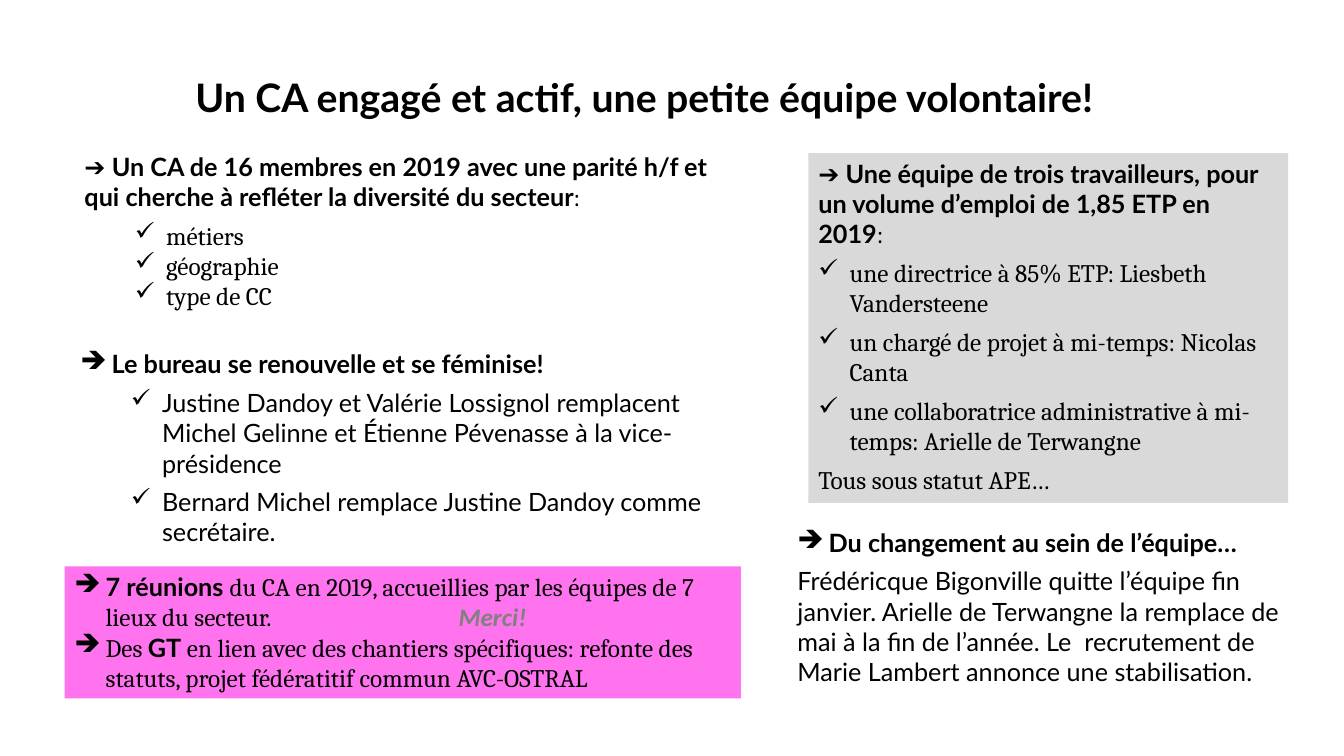
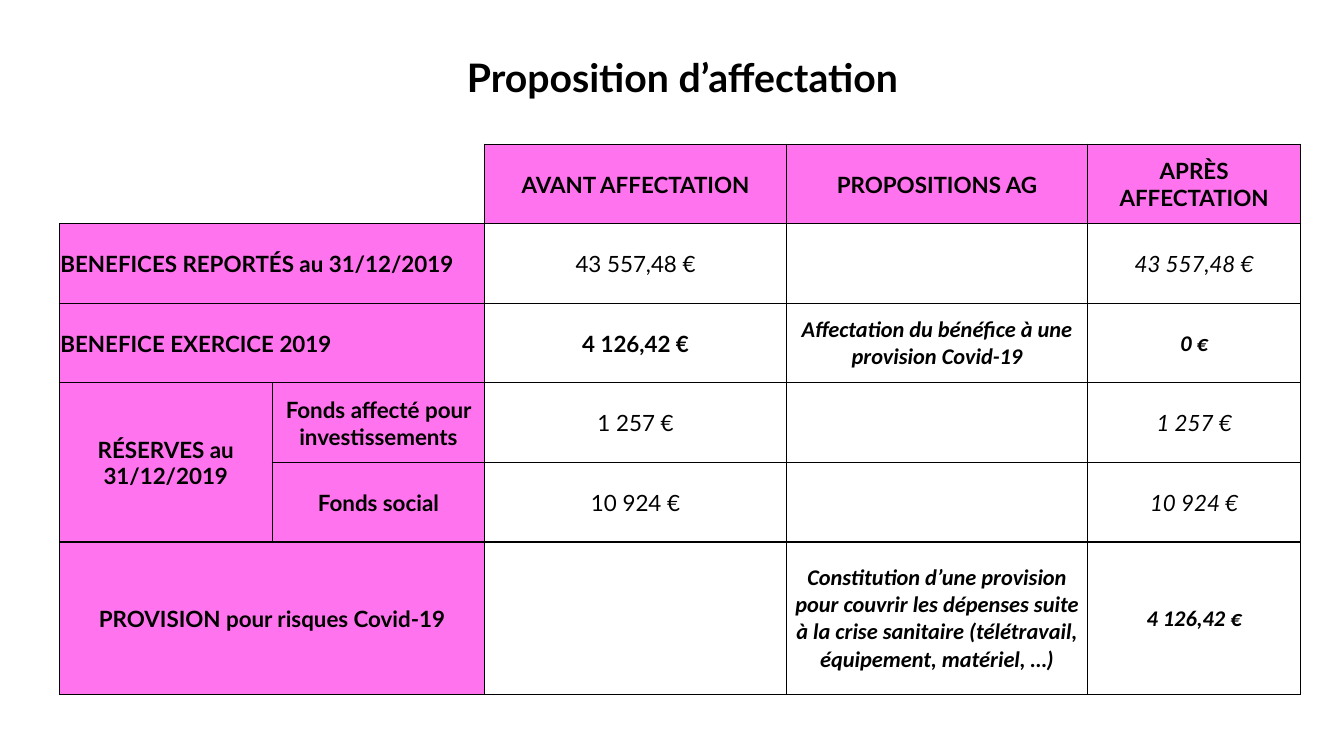
from dataclasses import dataclass
from itertools import product
from typing import Any, NamedTuple, Optional

from lxml.etree import SubElement
from pptx import Presentation
from pptx.dml.color import RGBColor
from pptx.enum.shapes import MSO_SHAPE
from pptx.enum.text import MSO_ANCHOR, MSO_AUTO_SIZE, PP_ALIGN
from pptx.oxml.ns import qn
from pptx.util import Inches, Pt

BLACK = RGBColor(0x00, 0x00, 0x00)
GREY = RGBColor(0x80, 0x80, 0x80)
LIGHT_GREY = RGBColor(0xD9, 0xD9, 0xD9)
PINK = RGBColor(0xFF, 0x74, 0xEE)
WHITE = RGBColor(0xFF, 0xFF, 0xFF)

SLIDE_WIDTH, SLIDE_HEIGHT = Inches(13.33), Inches(7.5)
COLUMN, ROW = SLIDE_WIDTH / 100, SLIDE_HEIGHT / 100
TITLE_ONLY = 5
HANGING = Inches(0.31)
LEVEL_STEP = Inches(0.5)
THANKS_TAB = Inches(3.81)
ARROW, CHECK = "➔", "✓"

LATO: dict[str, Any] = {"name": "Lato", "bold": False}
LATO_BOLD = {"name": "Lato", "bold": True}
LATO_ITALIC = {"name": "Lato", "italic": True}
CAMBRIA = {"name": "Cambria", "bold": False}
CALIBRI_STRONG = {"name": "Calibri", "bold": True, "italic": True}
THANKS = CALIBRI_STRONG | {"color": GREY}


class Box(NamedTuple):
    """Left, top, width and height in hundredths of the slide."""
    left: float
    top: float
    width: float
    height: float

    def lengths(self) -> tuple[int, ...]:
        units = (COLUMN, ROW, COLUMN, ROW)
        return tuple(round(value * unit) for value, unit in zip(self, units))


class Run(NamedTuple):
    text: str
    style: dict[str, Any]


@dataclass(frozen=True)
class Line:
    runs: tuple[Run, ...]
    bullet: str = ""
    level: int = 0
    after: int = 6
    tab: int = 0


@dataclass(frozen=True)
class Panel:
    box: Box
    lines: tuple[Line, ...]
    fill: Optional[RGBColor] = None


@dataclass(frozen=True)
class Entry:
    text: str = ""
    style: Optional[dict[str, Any]] = None
    fill: RGBColor = WHITE
    align: PP_ALIGN = PP_ALIGN.CENTER
    rows: int = 1
    columns: int = 1


def checks(style: dict[str, Any], level: int, after: int, *texts: str) -> tuple[Line, ...]:
    return tuple(Line((Run(text, style),), CHECK, level, after) for text in texts)


def label(text: str, **options: Any) -> Entry:
    return Entry(text, LATO_BOLD, PINK, **options)


PANELS = (
    Panel(Box(5.55, 19.33, 49.73, 22.67), (
        Line((Run("➔ Un CA de 16 membres en 2019 avec une parité h/f et qui cherche "
                  "à refléter la diversité du secteur", LATO_BOLD), Run(":", CAMBRIA))),
        *checks(CAMBRIA, 1, 0, "métiers", "géographie", "type de CC"),
    )),
    Panel(Box(60.15, 20.27, 35.7, 46.27), (
        Line((Run("➔ Une équipe de trois travailleurs, pour un volume d’emploi "
                  "de 1,85 ETP en 2019", LATO_BOLD), Run(":", CAMBRIA))),
        *checks(CAMBRIA, 0, 6,
                "une directrice à 85% ETP: Liesbeth Vandersteene",
                "un chargé de projet à mi-temps: Nicolas Canta",
                "une collaboratrice administrative à mi-temps: Arielle de Terwangne"),
        Line((Run("Tous sous statut APE…", CAMBRIA),)),
    ), LIGHT_GREY),
    Panel(Box(5.25, 45.47, 49.73, 27.87), (
        Line((Run("Le bureau se renouvelle et se féminise!", LATO_BOLD),), ARROW),
        *checks(LATO, 1, 6,
                "Justine Dandoy et Valérie Lossignol remplacent Michel Gelinne "
                "et Étienne Pévenasse à la vice-présidence",
                "Bernard Michel remplace Justine Dandoy comme secrétaire."),
    )),
    Panel(Box(4.8, 74.93, 50.33, 17.47), (
        Line((Run("7 réunions ", LATO_BOLD),
              Run("du CA en 2019, accueillies par les équipes de 7 lieux du secteur.\t",
                  CAMBRIA),
              Run("Merci!", THANKS)), ARROW, after=0, tab=THANKS_TAB),
        Line((Run("Des ", CAMBRIA), Run("GT", LATO_BOLD),
              Run(" en lien avec des chantiers spécifiques: refonte des statuts, "
                  "projet fédératitif commun AVC-OSTRAL", CAMBRIA)), ARROW, after=0),
    ), PINK),
    Panel(Box(58.6, 69.07, 39.2, 22.67), (
        Line((Run("Du changement au sein de l’équipe…", LATO_BOLD),), ARROW),
        Line((Run("Frédéricque Bigonville quitte l’équipe fin janvier. Arielle de "
                  "Terwangne la remplace de mai à la fin de l’année. Le  recrutement "
                  "de Marie Lambert annonce une stabilisation.", LATO),)),
    )),
)

TABLE_LEFT, TABLE_TOP = 4.42, 19.07
TABLE_COLUMNS = (15.83, 15.83, 22.43, 22.43, 15.83)
TABLE_ROWS = (10.53,) * 5 + (20.13,)
EMPTY = Entry()
ENTRIES: tuple[tuple[Optional[Entry], ...], ...] = (
    (EMPTY, EMPTY, label("AVANT AFFECTATION"), label("PROPOSITIONS AG"),
     label("APRÈS AFFECTATION")),
    (label("BENEFICES REPORTÉS au 31/12/2019", align=PP_ALIGN.LEFT, columns=2), None,
     Entry("43 557,48 €", LATO), EMPTY, Entry("43 557,48 €", LATO_ITALIC)),
    (label("BENEFICE EXERCICE 2019", align=PP_ALIGN.LEFT, columns=2), None,
     Entry("4 126,42 €", LATO_BOLD),
     Entry("Affectation du bénéfice à une provision Covid-19", CALIBRI_STRONG),
     Entry("0 €", CALIBRI_STRONG)),
    (label("RÉSERVES au 31/12/2019", rows=2), label("Fonds affecté pour investissements"),
     Entry("1 257 €", LATO), EMPTY, Entry("1 257 €", LATO_ITALIC)),
    (None, label("Fonds social"),
     Entry("10 924 €", LATO), EMPTY, Entry("10 924 €", LATO_ITALIC)),
    (label("PROVISION pour risques Covid-19", columns=2), None, EMPTY,
     Entry("Constitution d’une provision pour couvrir les dépenses suite à la crise "
           "sanitaire (télétravail, équipement, matériel, …)", CALIBRI_STRONG),
     Entry("4 126,42 €", CALIBRI_STRONG)),
)


def set_all(target: Any, values: dict[str, Any]) -> None:
    for name, value in values.items():
        setattr(target, name, value)


def add_run(paragraph: Any, run: Run, size: int) -> None:
    text_run = paragraph.add_run()
    text_run.text = run.text
    style = {"size": Pt(size)} | run.style
    text_run.font.color.rgb = style.pop("color", BLACK)
    set_all(text_run.font, style)


def add_titled_slide(presentation: Any, text: str, left: float, top: float) -> Any:
    slide = presentation.slides.add_slide(presentation.slide_layouts[TITLE_ONLY])
    title = slide.shapes.title
    box = Box(left, top, 86.25, 16.27).lengths()
    set_all(title, dict(zip(("left", "top", "width", "height"), box)))
    title.text_frame.vertical_anchor = MSO_ANCHOR.MIDDLE
    paragraph = title.text_frame.paragraphs[0]
    set_all(paragraph, {"alignment": PP_ALIGN.CENTER, "line_spacing": 0.9})
    add_run(paragraph, Run(text, LATO_BOLD), 28)
    return slide


def format_line(paragraph: Any, line: Line) -> None:
    set_all(paragraph, {"alignment": PP_ALIGN.LEFT, "level": line.level,
                        "space_after": Pt(line.after)})
    properties = paragraph._p.get_or_add_pPr()
    if line.bullet:
        properties.set("marL", str(HANGING + line.level * LEVEL_STEP))
        properties.set("indent", str(-HANGING))
        SubElement(properties, qn("a:buChar"), char=line.bullet)
    if line.tab:
        tabs = SubElement(properties, qn("a:tabLst"))
        SubElement(tabs, qn("a:tab"), pos=str(line.tab), algn="l")


def add_panel(slide: Any, panel: Panel) -> None:
    if panel.fill is None:
        shape = slide.shapes.add_textbox(*panel.box.lengths())
    else:
        shape = slide.shapes.add_shape(MSO_SHAPE.RECTANGLE, *panel.box.lengths())
        shape.shadow.inherit = False
        shape.fill.solid()
        shape.fill.fore_color.rgb = panel.fill
        shape.line.fill.background()
    frame = shape.text_frame
    set_all(frame, {"word_wrap": True, "vertical_anchor": MSO_ANCHOR.TOP,
                    "auto_size": MSO_AUTO_SIZE.SHAPE_TO_FIT_TEXT})
    for index, line in enumerate(panel.lines):
        paragraph = frame.add_paragraph() if index else frame.paragraphs[0]
        format_line(paragraph, line)
        for run in line.runs:
            add_run(paragraph, run, 18)


def add_borders(cell: Any) -> None:
    properties = cell._tc.get_or_add_tcPr()
    for side in ("lnL", "lnR", "lnT", "lnB"):
        border = SubElement(properties, qn(f"a:{side}"), w=str(Pt(1)))
        fill = SubElement(border, qn("a:solidFill"))
        SubElement(fill, qn("a:srgbClr"), val=str(BLACK))


def fill_cell(cell: Any, entry: Entry) -> None:
    cell.fill.solid()
    cell.fill.fore_color.rgb = entry.fill
    margin = Inches(0.01)
    set_all(cell, {"vertical_anchor": MSO_ANCHOR.MIDDLE, "margin_left": margin,
                   "margin_right": margin, "margin_top": margin, "margin_bottom": 0})
    paragraph = cell.text_frame.paragraphs[0]
    paragraph.alignment = entry.align
    if entry.style:
        add_run(paragraph, Run(entry.text, entry.style), 16)


def add_allocation_table(slide: Any) -> None:
    box = Box(TABLE_LEFT, TABLE_TOP, sum(TABLE_COLUMNS), sum(TABLE_ROWS))
    table = slide.shapes.add_table(len(TABLE_ROWS), len(TABLE_COLUMNS), *box.lengths()).table
    set_all(table, {"first_row": False, "horz_banding": False})
    for column, width in zip(table.columns, TABLE_COLUMNS):
        column.width = round(width * COLUMN)
    for row, height in zip(table.rows, TABLE_ROWS):
        row.height = round(height * ROW)
    for row, column in product(range(len(TABLE_ROWS)), range(len(TABLE_COLUMNS))):
        cell, entry = table.cell(row, column), ENTRIES[row][column]
        if row > 0 or column > 1:
            add_borders(cell)
        if entry is None:
            continue
        fill_cell(cell, entry)
        if entry.rows * entry.columns > 1:
            cell.merge(table.cell(row + entry.rows - 1, column + entry.columns - 1))


def main() -> None:
    presentation = Presentation()
    set_all(presentation, {"slide_width": SLIDE_WIDTH, "slide_height": SLIDE_HEIGHT})
    team_slide = add_titled_slide(
        presentation, "Un CA engagé et actif, une petite équipe volontaire!", 4.8, 5.07)
    for panel in PANELS:
        add_panel(team_slide, panel)
    allocation_slide = add_titled_slide(presentation, "Proposition d’affectation", 7.65, 2.4)
    add_allocation_table(allocation_slide)
    presentation.save("out.pptx")


if __name__ == "__main__":
    main()
